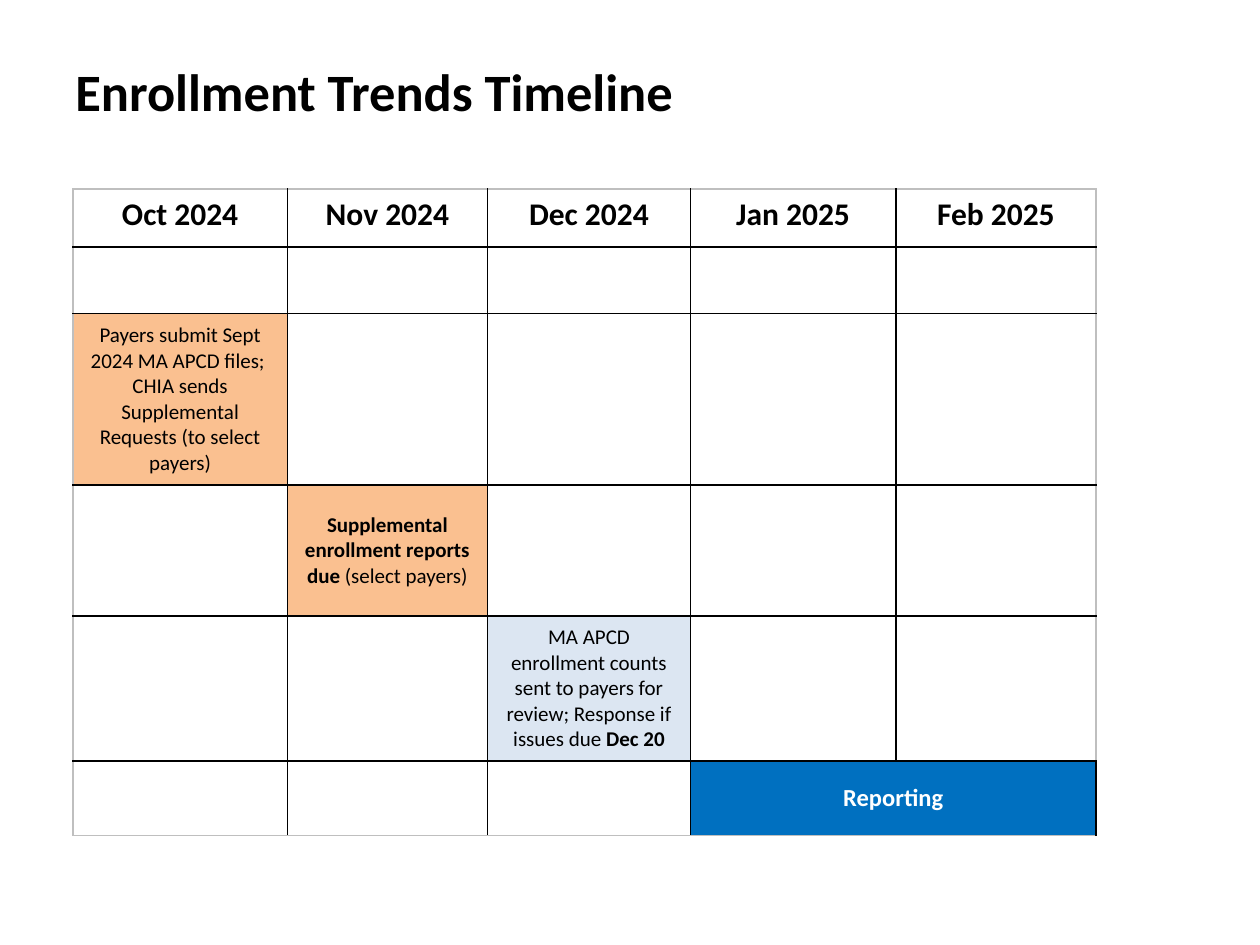
"""Build the enrollment trends timeline slide."""
from lxml import etree
from pptx import Presentation
from pptx.dml.color import RGBColor
from pptx.enum.text import MSO_ANCHOR, PP_ALIGN
from pptx.oxml.ns import qn
from pptx.util import Inches, Pt

CENTER = PP_ALIGN.CENTER
TOP, MIDDLE = MSO_ANCHOR.TOP, MSO_ANCHOR.MIDDLE
BLACK = RGBColor(0x00, 0x00, 0x00)
WHITE = RGBColor(0xFF, 0xFF, 0xFF)
GRAY = RGBColor(0xBF, 0xBF, 0xBF)
ORANGE = RGBColor(0xFA, 0xC0, 0x90)
PALE_BLUE = RGBColor(0xDC, 0xE6, 0xF2)
BLUE = RGBColor(0x00, 0x70, 0xC0)
FONT = "Calibri"

TITLE = "Enrollment Trends Timeline"
MONTHS = ["Oct 2024", "Nov 2024", "Dec 2024", "Jan 2025", "Feb 2025"]
COLUMN_WIDTHS = [1.7, 1.59, 1.61, 1.63, 1.59]
ROW_HEIGHTS = [0.46, 0.53, 1.36, 1.04, 1.15, 0.59]

# (row, column, months spanned, fill, text colour, size, paragraphs of (text, bold))
MILESTONES = [
    (2, 0, 1, ORANGE, BLACK, 12, [
        [("Payers submit Sept 2024 MA APCD files; ", False)],
        [("CHIA sends Supplemental Requests (to select payers)", False)]]),
    (3, 1, 1, ORANGE, BLACK, 12, [
        [("Supplemental enrollment reports due ", True), ("(select payers)", False)]]),
    (4, 2, 1, PALE_BLUE, BLACK, 12, [
        [("MA APCD enrollment counts sent to payers for review; Response if issues due ", False),
         ("Dec 20", True)]]),
    (5, 3, 2, BLUE, WHITE, 14, [[("Reporting", True)]]),
]


def write(frame, paragraphs, size, color, align=None):
    for index, runs in enumerate(paragraphs):
        paragraph = frame.paragraphs[0] if index == 0 else frame.add_paragraph()
        paragraph.alignment = align
        for text, bold in runs:
            run = paragraph.add_run()
            run.text = text
            run.font.name = FONT
            run.font.size = Pt(size)
            run.font.bold = bold
            run.font.color.rgb = color


def set_borders(cell, colors):
    properties = cell._tc.get_or_add_tcPr()
    for side, color in colors.items():
        line = etree.SubElement(properties, qn(f"a:ln{side}"), w=str(Pt(1)))
        solid = etree.SubElement(line, qn("a:solidFill"))
        etree.SubElement(solid, qn("a:srgbClr"), val=str(color))


def add_title(slide):
    box = slide.shapes.add_textbox(Inches(0.5), Inches(0.42), Inches(8.5), Inches(0.61))
    box.text_frame.word_wrap = True
    write(box.text_frame, [[(TITLE, True)]], 30, BLACK)


def add_timeline(slide):
    last_row, last_column = len(ROW_HEIGHTS) - 1, len(MONTHS) - 1
    timeline = slide.shapes.add_table(
        len(ROW_HEIGHTS), len(MONTHS), Inches(0.58), Inches(1.5),
        Inches(sum(COLUMN_WIDTHS)), Inches(sum(ROW_HEIGHTS))).table
    timeline.first_row = timeline.horz_banding = False
    for column, width in zip(timeline.columns, COLUMN_WIDTHS):
        column.width = Inches(width)
    for row, height in zip(timeline.rows, ROW_HEIGHTS):
        row.height = Inches(height)

    for r in range(last_row + 1):
        for c in range(last_column + 1):
            cell = timeline.cell(r, c)
            outer = {"L": c == 0, "R": c == last_column, "T": r == 0, "B": r == last_row}
            set_borders(cell, {side: GRAY if edge else BLACK for side, edge in outer.items()})
            cell.fill.background()

    headers = [(0, c, 1, None, BLACK, 18, [[(month, True)]]) for c, month in enumerate(MONTHS)]
    for r, c, span, fill, color, size, paragraphs in headers + MILESTONES:
        cell = timeline.cell(r, c)
        if span > 1:
            cell.merge(timeline.cell(r, c + span - 1))
        if fill is not None:
            cell.fill.solid()
            cell.fill.fore_color.rgb = fill
        cell.vertical_anchor = TOP if r == 0 else MIDDLE
        write(cell.text_frame, paragraphs, size, color, CENTER)


def main():
    deck = Presentation()
    deck.slide_width, deck.slide_height = Inches(10), Inches(7.5)
    slide = deck.slides.add_slide(deck.slide_layouts[6])
    add_title(slide)
    add_timeline(slide)
    deck.save("out.pptx")


if __name__ == "__main__":
    main()
